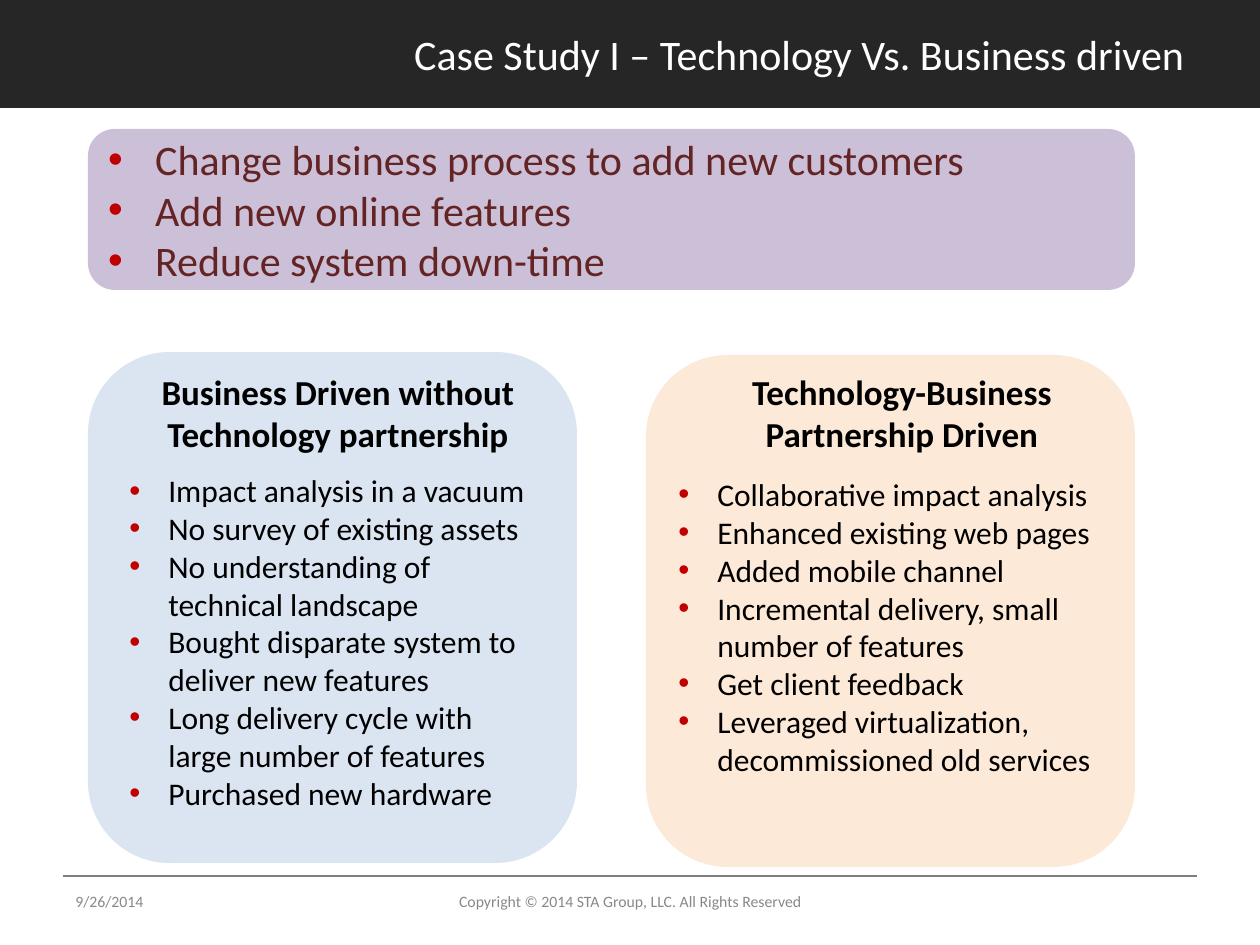
from lxml import etree
from pptx import Presentation
from pptx import util as u
from pptx.dml.color import RGBColor
from pptx.enum import shapes, text
from pptx.oxml.ns import qn

PX = 914400 / 126  # EMU per px
ALIGN = text.PP_ALIGN
MIDDLE, TOP = text.MSO_ANCHOR.MIDDLE, text.MSO_ANCHOR.TOP
color = RGBColor.from_string


def add_block(box, fill=None, kind=shapes.MSO_SHAPE.ROUNDED_RECTANGLE):
    """Place a filled shape, or a text box when there is no fill."""
    left, top, width, height = [round(v * PX) for v in box]
    if fill is None:
        return slide.shapes.add_textbox(left, top, width, height)
    block = slide.shapes.add_shape(kind, left, top, width, height)
    block.shadow.inherit = False
    block.fill.solid()
    block.fill.fore_color.rgb = color(fill)
    block.line.fill.background()
    return block


def write(block, lines, size, ink, align=ALIGN.LEFT, anchor=TOP, bold=False, indent=0):
    """Fill a shape with paragraphs; an indent in px makes them bulleted."""
    frame = block.text_frame
    frame.word_wrap = True
    frame.auto_size = text.MSO_AUTO_SIZE.NONE
    frame.vertical_anchor = anchor
    frame.text = "\n".join(lines)
    for paragraph in frame.paragraphs:
        paragraph.alignment = align
        if indent:
            props = paragraph._p.get_or_add_pPr()
            props.set("marL", str(round(indent * PX)))
            props.set("indent", str(-round(indent * PX)))
            bullet_color = etree.SubElement(props, qn("a:buClr"))
            etree.SubElement(bullet_color, qn("a:srgbClr"), val="C00000")
            etree.SubElement(props, qn("a:buFont"), typeface="Arial")
            etree.SubElement(props, qn("a:buChar"), char="•")
        font = paragraph.font
        font.name, font.size, font.bold = "Calibri", u.Pt(size), bold
        font.color.rgb = color(ink)


prs = Presentation()
prs.slide_width, prs.slide_height = u.Inches(10), u.Inches(7.5)
slide = prs.slides.add_slide(prs.slide_layouts[5])

# Title on a dark band, which goes behind it
band = add_block((0, 0, 1261, 108), "262626", shapes.MSO_SHAPE.RECTANGLE)
slide.shapes._spTree.insert(2, band._element)
title = slide.shapes.title
title.left, title.top, title.width, title.height = [
    round(v * PX) for v in (248, 0, 949, 108)]
write(title, ["Case Study I – Technology Vs. Business driven"], 24, "FFFFFF",
      ALIGN.RIGHT, MIDDLE)

# Footer rule, date and copyright
rule = slide.shapes.add_connector(
    shapes.MSO_CONNECTOR.STRAIGHT, *[round(v * PX) for v in (63, 876, 1197, 876)])
rule.line.color.rgb = color("7F7F7F")
rule.line.width = u.Pt(0.75)
etree.SubElement(rule._element.spPr, qn("a:effectLst"))
write(add_block((63, 876, 294, 50)), ["9/26/2014"], 9, "888888", anchor=MIDDLE)
write(add_block((357, 876, 546, 50)),
      ["Copyright © 2014 STA Group, LLC. All Rights Reserved"], 9, "888888",
      ALIGN.CENTER, MIDDLE)

# Goals
goals = ["Change business process to add new customers",
         "Add new online features",
         "Reduce system down-time"]
write(add_block((88, 129, 1047, 161), "CCC0D9"), goals, 24, "632423",
      anchor=MIDDLE, indent=47)

# The two approaches: card, heading and points
approaches = [
    ((88, 352, 489, 511), "DAE5F1",
     (129, 364, 418, 130), "Business Driven without Technology partnership",
     (117, 465, 430, 432),
     ["Impact analysis in a vacuum",
      "No survey of existing assets",
      "No understanding of technical landscape",
      "Bought disparate system to deliver new features",
      "Long delivery cycle with large number of features",
      "Purchased new hardware"]),
    ((646, 355, 489, 512), "FDE9D8",
     (699, 364, 406, 91), "Technology-Business Partnership Driven",
     (666, 469, 440, 393),
     ["Collaborative impact analysis",
      "Enhanced existing web pages",
      "Added mobile channel",
      "Incremental delivery, small number of features",
      "Get client feedback",
      "Leveraged virtualization, decommissioned old services"]),
]
for card_box, fill, heading_box, heading, points_box, points in approaches:
    add_block(card_box, fill)
    write(add_block(heading_box), [heading], 20, "000000", ALIGN.CENTER, bold=True)
    write(add_block(points_box), points, 18, "000000", indent=39)

prs.save("out.pptx")
